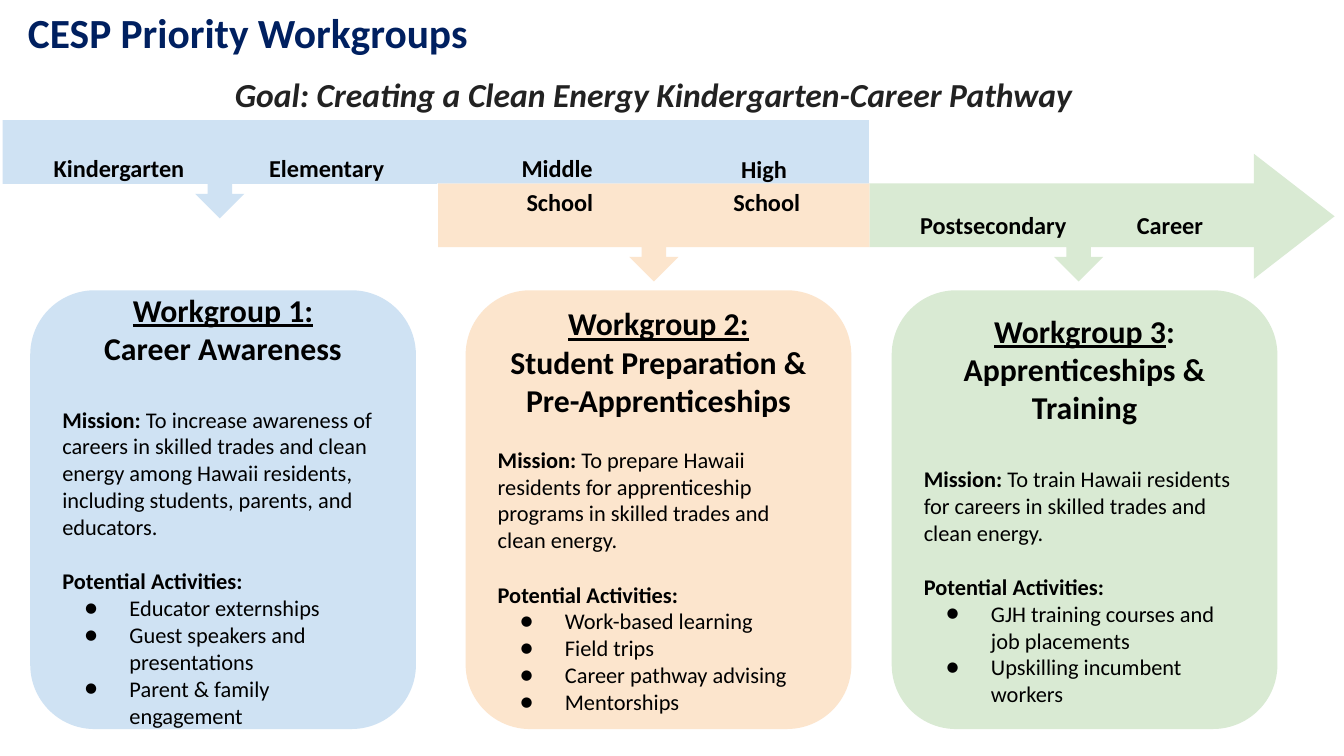
from lxml import etree
from pptx import Presentation
from pptx import util as u
from pptx.dml.color import RGBColor
from pptx.enum import shapes, text
from pptx.oxml.ns import qn

PX = 4572  # EMU per px, 200 px to the inch
FONT = "Calibri"
NAVY = RGBColor(0x00, 0x20, 0x60)
BLACK = RGBColor(0x00, 0x00, 0x00)
CHARCOAL = RGBColor(0x22, 0x22, 0x22)
BLUE = RGBColor(0xCF, 0xE2, 0xF3)
ORANGE = RGBColor(0xFC, 0xE5, 0xCD)
GREEN = RGBColor(0xD9, 0xEA, 0xD3)

CENTER, LEFT = text.PP_ALIGN.CENTER, text.PP_ALIGN.LEFT
MSO = shapes.MSO_SHAPE
INSET = 20
HEADING, BODY, LABEL = 17, 12, 13
LINE = 1.22  # height of a text line relative to its size

# (left, heading parts, name, gap size above the mission, mission, activities, fill)
WORKGROUPS = [
    (45, ("Workgroup 1:", ""), "Career Awareness", HEADING,
     "To increase awareness of careers in skilled trades and clean energy among "
     "Hawaii residents, including students, parents, and educators.",
     ["Educator externships", "Guest speakers and presentations",
      "Parent & family engagement"], BLUE),
    (693, ("Workgroup 2:", ""), "Student Preparation & Pre-Apprenticeships", BODY,
     "To prepare Hawaii residents for apprenticeship programs in skilled trades "
     "and clean energy.",
     ["Work-based learning", "Field trips", "Career pathway advising",
      "Mentorships"], ORANGE),
    (1327, ("Workgroup 3", ":"), "Apprenticeships & Training", HEADING,
     "To train Hawaii residents for careers in skilled trades and clean energy.",
     ["GJH training courses and job placements", "Upskilling incumbent workers"],
     GREEN),
]

# (left, top, width, lines)
STAGES = [
    (11, 202, 332, ["Kindergarten"]),
    (320, 202, 332, ["Elementary"]),
    (678, 202, 310, ["Middle ", "School"]),
    (1015, 203, 252, ["High ", "School"]),
    (1323, 286, 310, ["Postsecondary"]),
    (1586, 286, 310, ["Career"]),
]


class Deck:
    def __init__(self, width, height):
        self.prs = Presentation()
        self.prs.slide_width, self.prs.slide_height = width * PX, height * PX
        self.s = self.prs.slides.add_slide(self.prs.slide_layouts[6])

    def frame(self, sp, anchor=text.MSO_ANCHOR.TOP):
        """Set wrapping, anchor and margins, and return the text frame."""
        tf = sp.text_frame
        tf.word_wrap, tf.vertical_anchor = True, anchor
        for side in ("left", "right", "top", "bottom"):
            setattr(tf, f"margin_{side}", INSET * PX)
        return tf

    def shape(self, kind, x, y, w, h, fill):
        sp = self.s.shapes.add_shape(kind, x * PX, y * PX, w * PX, h * PX)
        sp.shadow.inherit = False
        sp.fill.solid()
        sp.fill.fore_color.rgb = fill
        sp.line.fill.background()
        return sp

    def turned(self, kind, x, y, w, h, fill):
        """Add a shape turned by 90 degrees that covers the given area."""
        sp = self.shape(kind, x, y, h, w, fill)
        sp.left, sp.top = x * PX + (w - h) * PX // 2, y * PX + (h - w) * PX // 2
        sp.rotation = 90
        return sp

    def callout(self, x, y, w, h, fill):
        sp = self.turned(MSO.RIGHT_ARROW_CALLOUT, x, y, w, h, fill)
        for i, value in enumerate((0.25, 0.25, 0.25, 0.65)):
            sp.adjustments[i] = value

    def paragraph(self, tf, runs, size, align=LEFT, color=BLACK, bullet=False,
                  **spacing):
        """Add a paragraph; runs are pairs of a text and its font format."""
        p = tf.paragraphs[0]
        if p.runs:
            p = tf.add_paragraph()
        p.alignment = align
        for name, value in spacing.items():
            setattr(p, name, value)
        if bullet:
            self.bullet(p, size)
        for words, style in runs:
            r = p.add_run()
            r.text = words
            r.font.color.rgb = color
            for name, value in {"name": FONT, "size": u.Pt(size), **style}.items():
                setattr(r.font, name, value)

    def bullet(self, p, size):
        pPr = p._p.get_or_add_pPr()
        pPr.set("marL", str(100 * PX))
        pPr.set("indent", str(-67 * PX))
        bu_color = etree.SubElement(pPr, qn("a:buClr"))
        etree.SubElement(bu_color, qn("a:srgbClr")).set("val", str(BLACK))
        etree.SubElement(pPr, qn("a:buSzPts")).set("val", str(size * 100))
        etree.SubElement(pPr, qn("a:buFont")).set("typeface", FONT)
        etree.SubElement(pPr, qn("a:buChar")).set("char", "●")

    def textbox(self, x, y, w, h, lines, size, align=CENTER, color=BLACK,
                italic=False, **spacing):
        sp = self.s.shapes.add_textbox(x * PX, y * PX, w * PX, h * PX)
        tf = self.frame(sp)
        for line in lines:
            self.paragraph(tf, [(line, {"bold": True, "italic": italic})], size,
                           align, color, **spacing)

    def workgroup(self, x, heading, name, gap, mission, activities, fill):
        sp = self.shape(MSO.ROUNDED_RECTANGLE, x, 432, 574, 653, fill)
        sp.adjustments[0] = 0.167
        tf = self.frame(sp, text.MSO_ANCHOR.MIDDLE)
        bold = {"bold": True}
        underlined, plain = heading
        runs = [(underlined, {"bold": True, "underline": True})]
        if plain:
            runs.append((plain, bold))
        self.paragraph(tf, runs, HEADING, CENTER)
        self.paragraph(tf, [(name, bold)], HEADING, CENTER)
        self.paragraph(tf, [("Mission:", bold), (" " + mission, {})], BODY,
                       space_before=u.Pt(gap * LINE))
        self.paragraph(tf, [("Potential Activities:", bold)], BODY,
                       space_before=u.Pt(BODY * LINE))
        for activity in activities:
            self.paragraph(tf, [(activity, {})], BODY, bullet=True)


def main():
    deck = Deck(2000, 1125)
    deck.callout(652, 273, 642, 146, ORANGE)
    deck.callout(4, 179, 646, 146, BLUE)
    deck.textbox(22, -10, 1864, 126, ["CESP Priority Workgroups"], 22.2, LEFT, NAVY)
    deck.textbox(300, 90, 1346, 58,
                 ["Goal: Creating a Clean Energy Kindergarten-Career Pathway"],
                 18, color=CHARCOAL, italic=True)
    for group in WORKGROUPS:
        deck.workgroup(*group)
    deck.callout(1294, 273, 622, 146, GREEN)
    deck.turned(MSO.FLOWCHART_EXTRACT, 1866, 229, 120, 186, GREEN)
    deck.shape(MSO.RECTANGLE, 616, 179, 677, 94, BLUE)
    for x, y, w, lines in STAGES:
        deck.textbox(x, y, w, 218, lines, LABEL, line_spacing=1.15)
    deck.prs.save("out.pptx")


if __name__ == "__main__":
    main()
